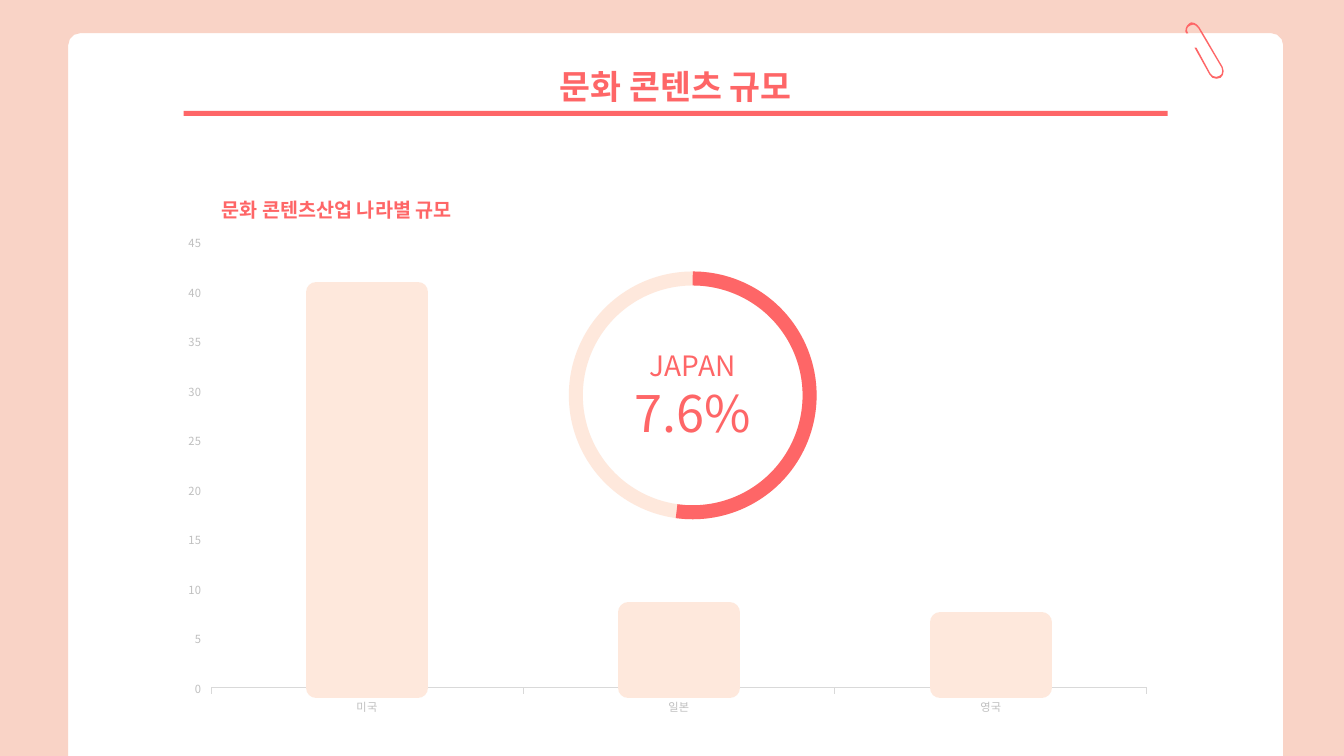
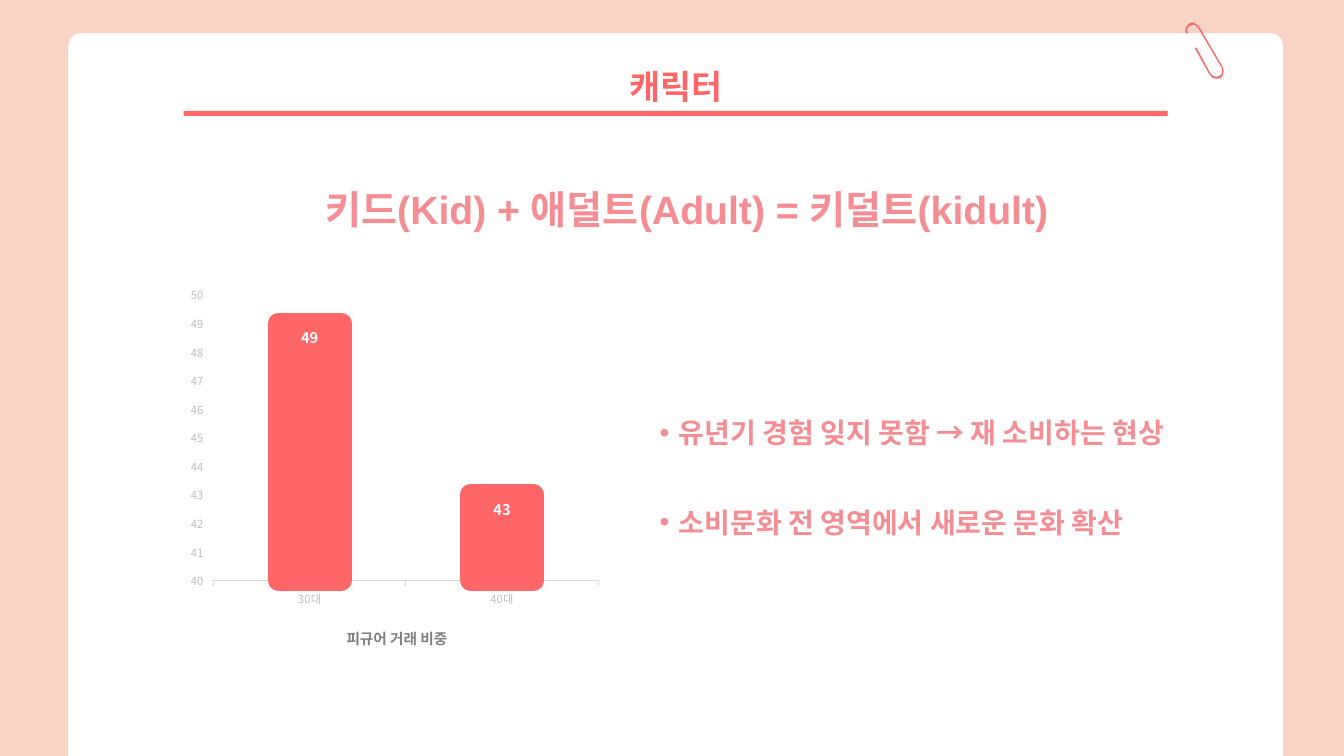
from dataclasses import dataclass

import lxml.etree
import pptx
import pptx.chart.data
import pptx.dml.color
import pptx.enum.chart
import pptx.enum.shapes
import pptx.enum.text
import pptx.oxml
import pptx.oxml.ns
import pptx.util

Pt = pptx.util.Pt
qn = pptx.oxml.ns.qn
ALIGN = pptx.enum.text.PP_ALIGN
ANCHOR = pptx.enum.text.MSO_ANCHOR
SHAPE = pptx.enum.shapes.MSO_SHAPE


@dataclass(frozen=True)
class Theme:
    font: str = "Noto Sans CJK KR"
    latin: str = "Arial"
    coral: str = "FE6667"
    rose: str = "F48E93"
    cream: str = "FEE8DC"
    peach: str = "F9D3C6"
    white: str = "FFFFFF"
    gray: str = "808080"
    axis_text: str = "BFBFBF"
    axis_line: str = "D9D9D9"
    title: float = 24
    headline: float = 28
    bullet: float = 20
    subtitle: float = 14
    caption: float = 10.5
    ring_name: float = 20
    ring_value: float = 36
    axis: float = 8
    spacing: float = 1.5


T = Theme()
WIDTH, HEIGHT = 960, 540
PAPER = (48.7, 23.7, 867.9, 516.3)
CORNER = 8.6

# Outline of the paper clip, relative to its corner
CLIP = [
    (3.6, 0),
    (5.8, 0, 7.9, 1.4, 9.4, 3.6),
    (15.1, 13, 20.2, 22.3, 25.9, 31.7),
    (27.4, 34.6, 26.6, 38.2, 24.5, 39.6),
    (21.6, 41, 18, 40.3, 16.6, 37.4),
    (5.8, 18), (7.2, 18), (17.3, 36.7),
    (18.7, 38.9, 21.6, 39.6, 23.8, 38.2),
    (25.9, 37.4, 25.9, 34.6, 25.2, 32.4),
    (8.6, 4.3),
    (7.2, 2.2, 5, 0.7, 2.9, 2.2),
    (0.7, 2.9, 0, 5, 0.7, 6.5),
    (1.4, 7.9), (0, 7.9), (-0.7, 6.5),
    (-0.7, 4.3, 0, 2.2, 2.2, 0.7),
    (2.9, 0.7, 2.9, 0, 3.6, 0),
]


def rgb(color):
    return pptx.dml.color.RGBColor.from_string(color)


def pts(box):
    return [Pt(v) for v in box]


def paint(sp, fill=None, line=None, weight=0):
    sp.shadow.inherit = False
    if fill:
        sp.fill.solid()
        sp.fill.fore_color.rgb = rgb(fill)
    else:
        sp.fill.background()
    if line:
        sp.line.color.rgb = rgb(line)
        sp.line.width = Pt(weight)
    else:
        sp.line.fill.background()


def add_run(p, text, size, color, bold=False, font=T.font):
    r = p.add_run()
    r.text = text
    r.font.size, r.font.bold, r.font.name = Pt(size), bold, font
    r.font.color.rgb = rgb(color)


def write(sp, box, lines, size, color, align=ALIGN.LEFT, font=T.font, gap=0):
    """Place a text shape and fill it with one bold paragraph a line."""
    sp.left, sp.top, sp.width, sp.height = pts(box)
    tf = sp.text_frame
    tf.word_wrap = True
    tf.auto_size = pptx.enum.text.MSO_AUTO_SIZE.NONE
    tf.vertical_anchor = ANCHOR.TOP
    for i, line in enumerate(lines):
        p = tf.add_paragraph() if i else tf.paragraphs[0]
        p.alignment, p.line_spacing = align, T.spacing
        p.space_before = Pt(gap if i else 0)
        add_run(p, line, size, color, True, font)


def add_text(slide, box, text, size, color, **style):
    write(slide.shapes.add_textbox(*pts(box)), box, [text], size, color, **style)


def draw_outline(slide, left, top, steps, fill, samples=3):
    """Fill a closed outline; a step of six numbers is a Bezier curve."""
    points = [steps[0]]
    for step in steps[1:]:
        if len(step) == 2:
            points.append(step)
            continue
        start = points[-1]
        for n in range(1, samples + 1):
            t = n / samples
            u = 1 - t
            points.append(tuple(
                u ** 3 * start[k] + 3 * u * u * t * step[k]
                + 3 * u * t * t * step[k + 2] + t ** 3 * step[k + 4]
                for k in (0, 1)))
    vertices = [pts(point) for point in points]
    builder = slide.shapes.build_freeform(*vertices[0])
    builder.add_line_segments(vertices[1:], close=True)
    paint(builder.convert_to_shape(Pt(left), Pt(top)), fill)


def add_frame(slide, box, corner):
    """Coloured border around a sheet with rounded top corners, and its clip."""
    left, top, width, height = box
    right, bottom = left + width, top + height
    c = corner * 0.45
    draw_outline(slide, 0, 0, [
        (0, 0), (WIDTH, 0), (WIDTH, bottom), (right, bottom), (right, top + corner),
        (right, top + c, right - c, top, right - corner, top),
        (left + corner, top),
        (left + c, top, left, top + c, left, top + corner),
        (left, bottom), (0, bottom)], T.peach)
    draw_outline(slide, right - 69.2, top - 7.7, CLIP, T.coral)


def add_page(prs, layout, title):
    """Slide with the shared frame, title and rule."""
    slide = prs.slides.add_slide(prs.slide_layouts[layout])
    add_frame(slide, PAPER, CORNER)
    write(slide.shapes.title, (242.6, 28.8, 480, 45.4), [title],
          T.title, T.coral, align=ALIGN.CENTER)
    rule = slide.shapes.add_shape(SHAPE.RECTANGLE, *pts((131.2, 79.2, 702.8, 3.6)))
    paint(rule, T.coral)
    return slide


def set_plot_area(chart, x, y, w, h):
    values = "".join(f'<c:{tag} val="{v}"/>' for tag, v in zip("xywh", (x, y, w, h)))
    layout = pptx.oxml.parse_xml(
        f'<c:layout {pptx.oxml.ns.nsdecls("c")}><c:manualLayout>'
        '<c:layoutTarget val="inner"/><c:xMode val="edge"/><c:yMode val="edge"/>'
        f'{values}</c:manualLayout></c:layout>')
    area = chart._chartSpace.find(".//" + qn("c:plotArea"))
    for old in area.findall(qn("c:layout")):
        area.remove(old)
    area.insert(0, layout)


def add_columns(slide, box, data, color, scale, plot_box, labels=False):
    """Column chart whose thick outlines give rounded bars."""
    chart_data = pptx.chart.data.CategoryChartData()
    chart_data.categories = list(data)
    chart_data.add_series("Series 1", list(data.values()))
    kind = pptx.enum.chart.XL_CHART_TYPE.COLUMN_CLUSTERED
    chart = slide.shapes.add_chart(kind, *pts(box), chart_data).chart
    chart.has_title = chart.has_legend = False
    chart.font.name, chart.font.size = T.font, Pt(T.axis)
    set_plot_area(chart, *plot_box)

    # Axes
    value, category = chart.value_axis, chart.category_axis
    value.minimum_scale, value.maximum_scale, value.major_unit = scale
    value.has_major_gridlines = False
    value.format.line.fill.background()
    category.format.line.color.rgb = rgb(T.axis_line)
    category.format.line.width = Pt(0.75)
    for axis in (value, category):
        axis.major_tick_mark = pptx.enum.chart.XL_TICK_MARK.OUTSIDE
        font = axis.tick_labels.font
        font.size, font.name = Pt(T.axis), T.font
        font.color.rgb = rgb(T.axis_text)

    # Bars
    plot = chart.plots[0]
    plot.gap_width, plot.overlap, plot.vary_by_categories = 207, -83, False
    series = plot.series[0]
    series.format.fill.solid()
    series.format.fill.fore_color.rgb = rgb(color)
    series.format.line.color.rgb = rgb(color)
    series.format.line.width = Pt(15)
    lxml.etree.SubElement(series._element.find(".//" + qn("a:ln")), qn("a:round"))
    if labels:
        marks = series.data_labels
        marks.show_value = True
        marks.position = pptx.enum.chart.XL_LABEL_POSITION.INSIDE_END
        marks.font.size, marks.font.bold, marks.font.name = Pt(T.caption), True, T.font
        marks.font.color.rgb = rgb(T.white)


def add_ring(slide, box, name, value):
    """Ring with a highlighted arc and two lines of text."""
    group = slide.shapes.add_group_shape()
    ring = group.shapes.add_shape(SHAPE.OVAL, *pts(box))
    paint(ring, T.white, T.cream, 10)
    tf = ring.text_frame
    tf.word_wrap, tf.vertical_anchor = True, ANCHOR.MIDDLE
    tf.margin_left = tf.margin_right = tf.margin_top = tf.margin_bottom = 0
    for i, (text, size) in enumerate([(name, T.ring_name), (value, T.ring_value)]):
        p = tf.add_paragraph() if i else tf.paragraphs[0]
        p.alignment = ALIGN.CENTER
        add_run(p, text, size, T.coral)
    arc = group.shapes.add_shape(SHAPE.ARC, *pts(box))
    arc.adjustments[0], arc.adjustments[1] = 162, 58.75
    paint(arc, None, T.coral, 10)


def add_bullets(slide, box, items):
    body = slide.placeholders[1]
    write(body, box, items, T.bullet, T.rose, gap=28)
    for p in body.text_frame.paragraphs:
        pPr = p._p.get_or_add_pPr()
        pPr.set("marL", str(Pt(13.7)))
        pPr.set("indent", str(Pt(-13.7)))
        font = lxml.etree.SubElement(pPr, qn("a:buFont"))
        font.set("typeface", T.latin)
        lxml.etree.SubElement(pPr, qn("a:buChar")).set("char", "•")


def build_market_slide(prs):
    slide = add_page(prs, 5, "문화 콘텐츠 규모")
    add_text(slide, (151.2, 129.6, 309, 29.5), "문화 콘텐츠산업 나라별 규모",
             T.subtitle, T.coral)
    add_columns(slide, (131.2, 129.4, 702.8, 388.8),
                {"미국": 40, "일본": 7.6, "영국": 6.6},
                T.cream, (0, 45, 5), (0.028, 0.113, 0.951, 0.818))
    add_ring(slide, (411.3, 198.9, 167, 167), "JAPAN", "7.6%")


def build_character_slide(prs):
    slide = add_page(prs, 1, "캐릭터")
    add_text(slide, (150.5, 112.3, 680, 51.8), "키드(Kid) + 애덜트(Adult) = 키덜트(kidult)",
             T.headline, T.rose, align=ALIGN.CENTER, font=T.latin)
    add_columns(slide, (131.2, 204.3, 314.8, 247.7), {"30대": 49, "40대": 43},
                T.coral, (40, 50, 1), (0.068, 0.025, 0.873, 0.824), labels=True)
    add_text(slide, (240.5, 440, 96.5, 23.8), "피규어 거래 비중", T.caption, T.gray)
    add_bullets(slide, (464, 281.5, 495, 102.2), [
        "유년기 경험 잊지 못함 → 재 소비하는 현상",
        "소비문화 전 영역에서 새로운 문화 확산"])


def main():
    prs = pptx.Presentation()
    prs.slide_width, prs.slide_height = Pt(WIDTH), Pt(HEIGHT)
    build_market_slide(prs)
    build_character_slide(prs)
    prs.save("out.pptx")


if __name__ == "__main__":
    main()
